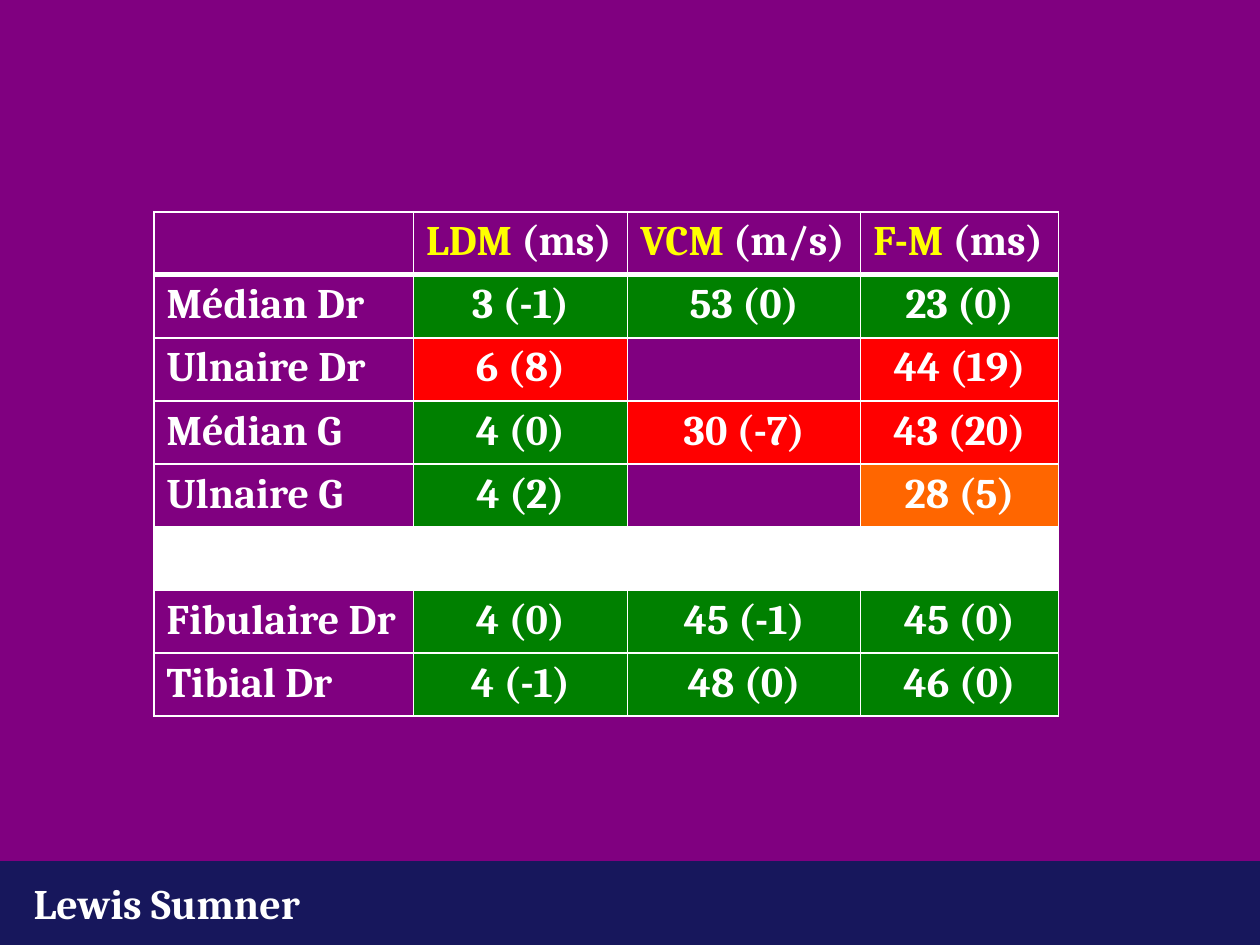
from typing import NamedTuple

from lxml import etree
from pptx import Presentation
from pptx.dml.color import RGBColor
from pptx.enum.shapes import MSO_SHAPE
from pptx.enum.text import PP_ALIGN
from pptx.oxml.ns import qn
from pptx.util import Pt

RECTANGLE = MSO_SHAPE.RECTANGLE
LEFT, CENTER = PP_ALIGN.LEFT, PP_ALIGN.CENTER

COLORS = {
    "navy": "17175C",
    "purple": "800080",
    "white": "FFFFFF",
    "yellow": "FFFF00",
    "normal": "008000",
    "borderline": "FF6600",
    "abnormal": "FF0000",
}
FONT = "Cambria"
FONT_SIZE = 24
ROW_HEIGHT = 36


class Measure(NamedTuple):
    name: str
    unit: str
    width: float


class Result(NamedTuple):
    text: str = ""
    status: str = ""


class Nerve(NamedTuple):
    name: str
    results: tuple[Result, ...]


NAME_WIDTH = 148.3
MEASURES = (
    Measure("LDM", "ms", 122.4),
    Measure("VCM", "m/s", 133.2),
    Measure("F-M", "ms", 113),
)
BLANK = Result()
SEPARATOR = Nerve("", (Result("", "white"),) * len(MEASURES))
NERVES = (
    Nerve("Médian Dr", (Result("3 (-1)", "normal"), Result("53 (0)", "normal"),
                        Result("23 (0)", "normal"))),
    Nerve("Ulnaire Dr", (Result("6 (8)", "abnormal"), BLANK,
                         Result("44 (19)", "abnormal"))),
    Nerve("Médian G", (Result("4 (0)", "normal"), Result("30 (-7)", "abnormal"),
                       Result("43 (20)", "abnormal"))),
    Nerve("Ulnaire G", (Result("4 (2)", "normal"), BLANK,
                        Result("28 (5)", "borderline"))),
    SEPARATOR,
    Nerve("Fibulaire Dr", (Result("4 (0)", "normal"), Result("45 (-1)", "normal"),
                           Result("45 (0)", "normal"))),
    Nerve("Tibial Dr", (Result("4 (-1)", "normal"), Result("48 (0)", "normal"),
                        Result("46 (0)", "normal"))),
)


def rgb(name: str) -> RGBColor:
    return RGBColor.from_string(COLORS[name])


def add_text(text_frame, text: str, *, color: str = "white", align=LEFT) -> None:
    """Append a bold run to the first paragraph."""
    paragraph = text_frame.paragraphs[0]
    paragraph.alignment = align
    run = paragraph.add_run()
    run.text = text
    run.font.name = FONT
    run.font.size = Pt(FONT_SIZE)
    run.font.bold = True
    run.font.color.rgb = rgb(color)


def set_borders(cell, *, top: float = 1, bottom: float = 1) -> None:
    """Draw four white borders, placed before the fill as the schema requires."""
    properties = cell._tc.get_or_add_tcPr()
    widths = {"a:lnL": 1, "a:lnR": 1, "a:lnT": top, "a:lnB": bottom}
    for position, (tag, width) in enumerate(widths.items()):
        line = etree.Element(qn(tag), w=str(Pt(width)))
        fill = etree.SubElement(line, qn("a:solidFill"))
        etree.SubElement(fill, qn("a:srgbClr"), val=COLORS["white"])
        properties.insert(position, line)


def format_cell(cell, row: int, fill: str = "") -> None:
    if fill:
        cell.fill.solid()
        cell.fill.fore_color.rgb = rgb(fill)
    else:
        cell.fill.background()
    set_borders(cell, top=3 if row == 1 else 1, bottom=3 if row == 0 else 1)


def add_results_table(slide) -> None:
    widths = [NAME_WIDTH] + [measure.width for measure in MEASURES]
    row_count = len(NERVES) + 1
    table = slide.shapes.add_table(
        row_count, len(widths), Pt(88), Pt(121),
        Pt(sum(widths)), Pt(ROW_HEIGHT * row_count)).table
    table.first_row = False
    table.horz_banding = False
    for column, width in zip(table.columns, widths):
        column.width = Pt(width)
    for table_row in table.rows:
        table_row.height = Pt(ROW_HEIGHT)

    format_cell(table.cell(0, 0), 0)
    for column, measure in enumerate(MEASURES, 1):
        cell = table.cell(0, column)
        format_cell(cell, 0)
        add_text(cell.text_frame, measure.name, color="yellow")
        add_text(cell.text_frame, f" ({measure.unit})")

    for row, nerve in enumerate(NERVES, 1):
        name_cell = table.cell(row, 0)
        format_cell(name_cell, row, "white" if nerve is SEPARATOR else "")
        if nerve.name:
            add_text(name_cell.text_frame, nerve.name)
        for column, result in enumerate(nerve.results, 1):
            cell = table.cell(row, column)
            format_cell(cell, row, result.status)
            if result.text:
                add_text(cell.text_frame, result.text, align=CENTER)


def main() -> None:
    presentation = Presentation()
    presentation.slide_width = Pt(720)
    presentation.slide_height = Pt(540)
    slide = presentation.slides.add_slide(presentation.slide_layouts[6])
    slide.background.fill.solid()
    slide.background.fill.fore_color.rgb = rgb("navy")

    panel = slide.shapes.add_shape(RECTANGLE, Pt(0), Pt(0), Pt(720), Pt(492))
    panel.shadow.inherit = False
    panel.fill.solid()
    panel.fill.fore_color.rgb = rgb("purple")
    panel.line.fill.background()

    footer = slide.shapes.add_textbox(Pt(12.2), Pt(498.2), Pt(354.2), Pt(36))
    footer.text_frame.word_wrap = True
    add_text(footer.text_frame, "Lewis Sumner")

    add_results_table(slide)
    presentation.save("out.pptx")


if __name__ == "__main__":
    main()
